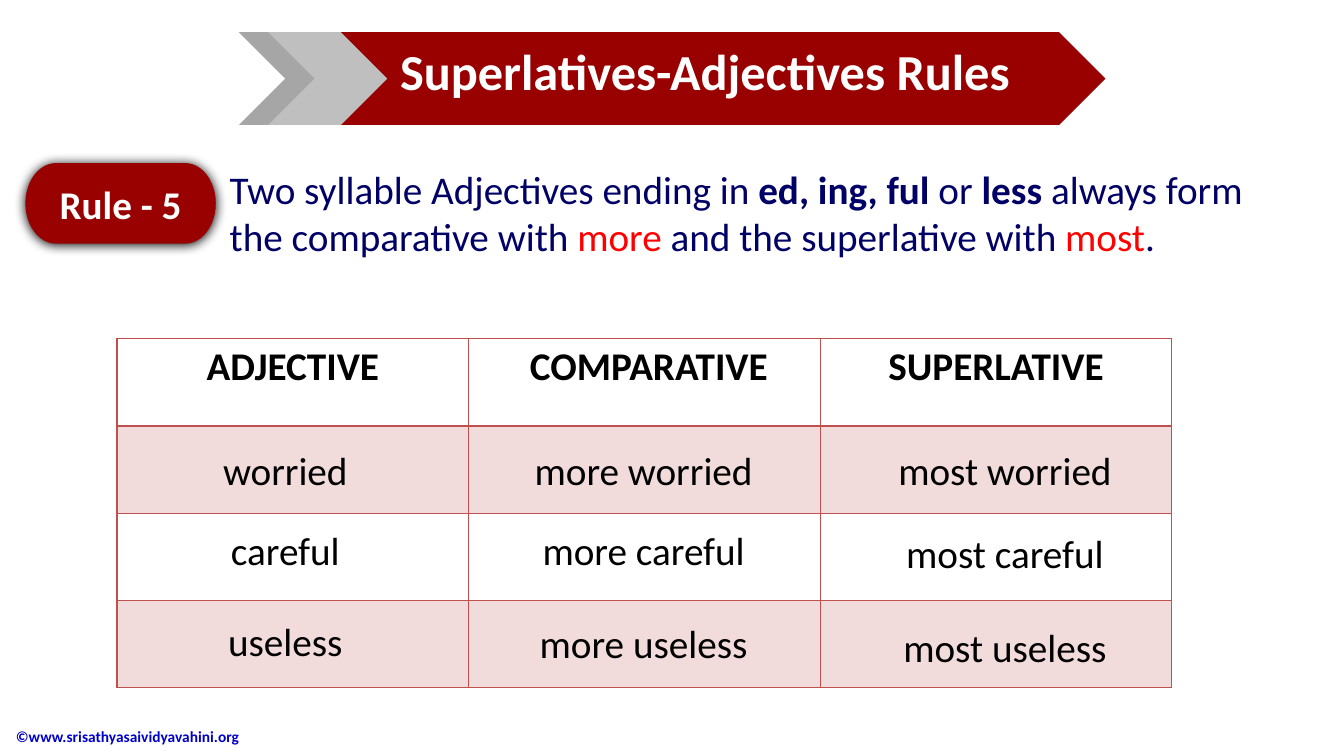
import pptx
import pptx.dml.color
import pptx.enum.shapes
import pptx.enum.text
import pptx.oxml
import pptx.oxml.ns
import pptx.util

Cm = pptx.util.Cm
Align = pptx.enum.text.PP_ALIGN
Anchor = pptx.enum.text.MSO_ANCHOR
Kind = pptx.enum.shapes.MSO_SHAPE

SPACE = pptx.oxml.ns.nsdecls("a")
RED = "990000"
NAVY = "000066"
BRIGHT = "FF0000"
ROSE = "C0504D"


def tone(hue):
    return pptx.dml.color.RGBColor.from_string(hue)


def write(para, text, size=28, hue="000000", bold=False, align=Align.CENTER):
    para.alignment = align
    run = para.add_run()
    run.text = text
    font = run.font
    font.name = "Calibri"
    font.size = pptx.util.Pt(size)
    font.bold = bold
    font.color.rgb = tone(hue)


def add_box(slide, left, top, width, height, anchor=Anchor.TOP):
    box = slide.shapes.add_textbox(Cm(left), Cm(top), Cm(width), Cm(height))
    frame = box.text_frame
    frame.word_wrap = True
    frame.vertical_anchor = anchor
    return frame.paragraphs[0]


def add_block(shapes, kind, left, top, width, height, hue):
    block = shapes.add_shape(kind, Cm(left), Cm(top), Cm(width), Cm(height))
    block.shadow.inherit = False
    block.fill.solid()
    block.fill.fore_color.rgb = tone(hue)
    block.line.fill.background()
    return block


def add_banner(slide):
    group = slide.shapes.add_group_shape()
    for kind, left, width, hue in (
        (Kind.CHEVRON, 6.02, 3, "A6A6A6"),
        (Kind.PENTAGON, 8.26, 19.6, RED),
        (Kind.CHEVRON, 6.76, 3, "BFBFBF"),
    ):
        add_block(group.shapes, kind, left, 0.81, width, 2.34, hue)

    title = slide.shapes.title
    title.left, title.top = Cm(8.26), Cm(0.81)
    title.width, title.height = Cm(19.02), Cm(1.93)
    frame = title.text_frame
    frame.auto_size = pptx.enum.text.MSO_AUTO_SIZE.NONE
    frame.vertical_anchor = Anchor.MIDDLE
    write(frame.paragraphs[0], "Superlatives-Adjectives Rules",
          size=36, hue="FFFFFF", bold=True)
    title.element.getparent().append(title.element)


def add_badge(slide):
    badge = add_block(slide.shapes, Kind.FLOWCHART_TERMINATOR,
                      0.64, 4.11, 4.8, 2.03, RED)
    glow = pptx.oxml.parse_xml(
        f'<a:outerShdw {SPACE} blurRad="107950" dist="12700" dir="5400000" '
        'algn="ctr" rotWithShape="0"><a:srgbClr val="000000"/></a:outerShdw>')
    badge.element.spPr.find(pptx.oxml.ns.qn("a:effectLst")).append(glow)
    frame = badge.text_frame
    frame.vertical_anchor = Anchor.MIDDLE
    write(frame.paragraphs[0], "Rule - 5", hue="FFFFFF", bold=True)


def add_rule(slide):
    para = add_box(slide, 5.54, 4.04, 26.59, 2.64)
    for text, hue, bold in (
        ("Two syllable Adjectives ending in ", NAVY, False),
        ("ed, ing, ful", NAVY, True),
        (" or ", NAVY, False),
        ("less", NAVY, True),
        (" always form the comparative with ", NAVY, False),
        ("more", BRIGHT, False),
        (" and the superlative with ", NAVY, False),
        ("most", BRIGHT, False),
        (".", NAVY, False),
    ):
        write(para, text, hue=hue, bold=bold, align=Align.LEFT)


def edge(cell, widths):
    props = cell._tc.get_or_add_tcPr()
    for spot, (side, width) in enumerate(widths.items()):
        props.insert(spot, pptx.oxml.parse_xml(
            f'<a:ln{side} {SPACE} w="{pptx.util.Pt(width)}"><a:solidFill>'
            f'<a:srgbClr val="{ROSE}"/></a:solidFill></a:ln{side}>'))


def add_grid(slide):
    table = slide.shapes.add_table(
        4, 3, Cm(2.95), Cm(8.53), Cm(26.58), Cm(8.8)).table
    table.first_row = False
    table.horz_banding = False
    for row, line in enumerate(table.rows):
        for cell in line.cells:
            if row % 2:
                cell.fill.solid()
                cell.fill.fore_color.rgb = tone("F2DCDB")
            else:
                cell.fill.background()
            edge(cell, {"L": 1, "R": 1, "T": 2 if row == 1 else 1,
                        "B": 2 if row == 0 else 1})
    heads = ("ADJECTIVE", " COMPARATIVE", "SUPERLATIVE")
    for cell, head in zip(table.rows[0].cells, heads):
        write(cell.text_frame.paragraphs[0], head, bold=True)


def add_words(slide):
    columns = (("", 4.59, 5.2), ("more ", 12.47, 7.5), ("most ", 22.2, 6.25))
    rows = (
        ("worried", (11.13, 11.13, 11.13)),
        ("careful", (13.13, 13.13, 13.21)),
        ("useless", (15.42, 15.49, 15.57)),
    )
    for word, tops in rows:
        for (prefix, left, width), top in zip(columns, tops):
            write(add_box(slide, left, top, width, 1.45), prefix + word)


def main():
    deck = pptx.Presentation()
    deck.slide_width, deck.slide_height = Cm(33.87), Cm(19.05)
    slide = deck.slides.add_slide(deck.slide_layouts[5])
    write(add_box(slide, 0.15, 18.03, 8.97, 1.04, anchor=Anchor.MIDDLE),
          "©www.srisathyasaividyavahini.org",
          size=11, hue="0000CC", bold=True, align=Align.LEFT)
    add_grid(slide)
    add_words(slide)
    add_badge(slide)
    add_banner(slide)
    add_rule(slide)
    deck.save("out.pptx")


if __name__ == "__main__":
    main()
